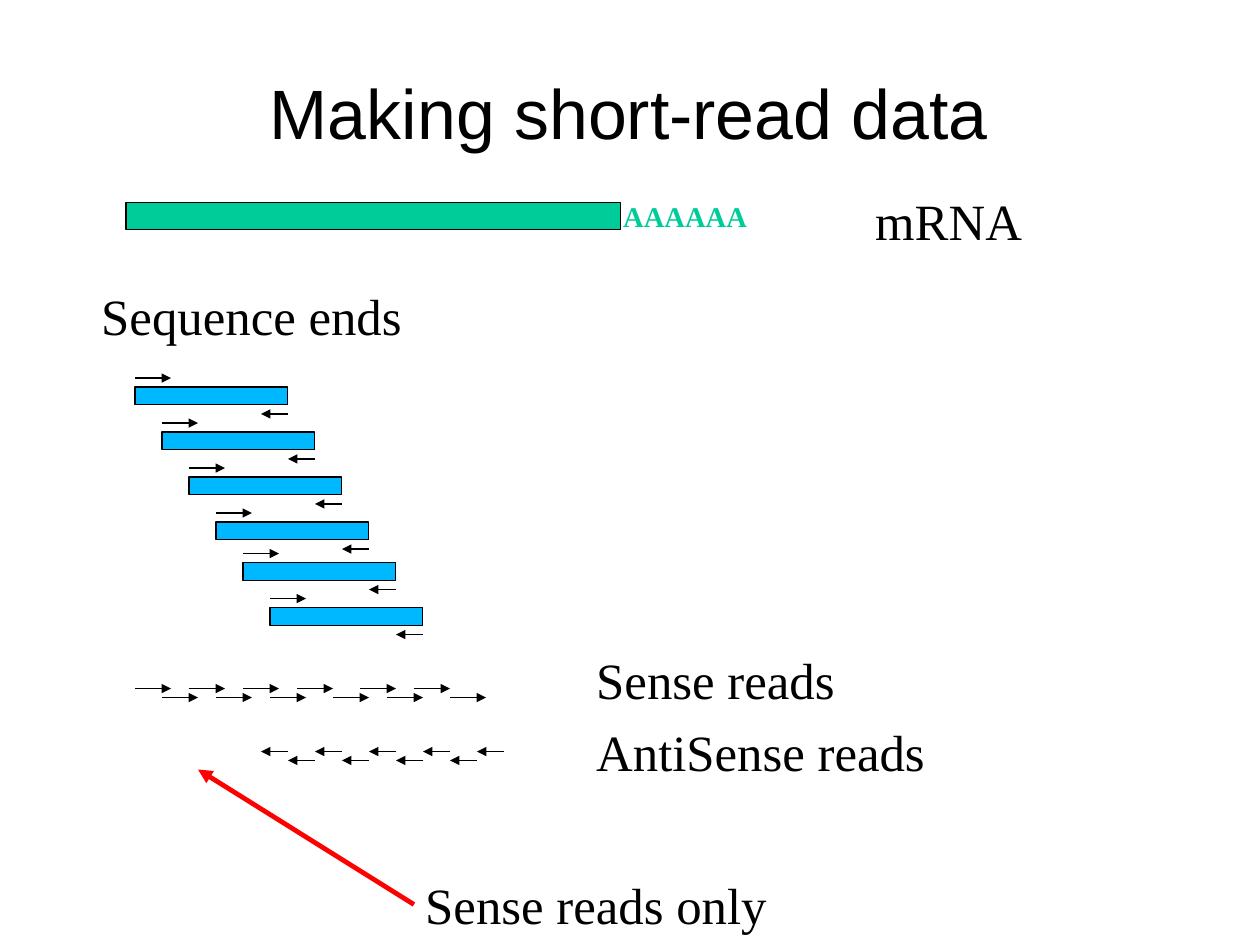
from lxml.etree import SubElement
from pptx import Presentation
from pptx.dml.color import RGBColor
from pptx.enum.shapes import MSO_CONNECTOR as Connector, MSO_SHAPE as Preset
from pptx.enum.text import MSO_ANCHOR as Anchor, MSO_AUTO_SIZE as AutoSize, PP_ALIGN as Align
from pptx.oxml.ns import qn
from pptx.util import Cm, Pt

BLACK = "000000"
RED = "FF0000"
GREEN = "00CC99"
BLUE = "00B8FF"


def color(value):
    return RGBColor.from_string(value)


def apply(target, values):
    for name, value in values.items():
        setattr(target, name, value)


class Diagram:
    thin = 0.75
    label_frame = {"word_wrap": True, "auto_size": AutoSize.SHAPE_TO_FIT_TEXT}
    title_frame = {"word_wrap": True, "vertical_anchor": Anchor.MIDDLE,
                   "margin_left": 0, "margin_right": 0, "margin_top": 0, "margin_bottom": 0}
    title_paragraph = {"alignment": Align.CENTER, "line_spacing": 0.93}
    label_font = {"name": "Times New Roman", "size": Pt(32)}
    tail_font = {"name": "Times New Roman", "size": Pt(18), "bold": True}
    title_font = {"name": "Arial", "size": Pt(44)}

    def __init__(self, slide):
        self.shapes = slide.shapes

    def text(self, words, left, top, width, height, frame, font, fill):
        box = self.shapes.add_textbox(Cm(left), Cm(top), Cm(width), Cm(height))
        apply(box.text_frame, frame)
        paragraph = box.text_frame.paragraphs[0]
        run = paragraph.add_run()
        run.text = words
        apply(run.font, font)
        run.font.color.rgb = color(fill)
        return box, paragraph

    def title(self, words, left, top, width, height):
        _, paragraph = self.text(words, left, top, width, height,
                                 self.title_frame, self.title_font, BLACK)
        apply(paragraph, self.title_paragraph)

    def label(self, words, left, top, width, height=1.6, font=label_font, fill=BLACK):
        box, paragraph = self.text(words, left, top, width, height,
                                   self.label_frame, font, fill)
        spacing = SubElement(paragraph._p.get_or_add_pPr(), qn("a:spcBef"))
        SubElement(spacing, qn("a:spcPct"), val="50000")
        return box

    def bar(self, left, top, width, height, fill):
        bar = self.shapes.add_shape(Preset.RECTANGLE, Cm(left), Cm(top), Cm(width), Cm(height))
        bar.shadow.inherit = False
        bar.fill.solid()
        bar.fill.fore_color.rgb = color(fill)
        bar.line.color.rgb = color(BLACK)
        bar.line.width = Pt(self.thin)

    def arrow(self, x1, y1, x2, y2, stroke=BLACK, weight=thin):
        arrow = self.shapes.add_connector(Connector.STRAIGHT, Cm(x1), Cm(y1), Cm(x2), Cm(y2))
        arrow.line.color.rgb = color(stroke)
        arrow.line.width = Pt(weight)
        properties = arrow._element.spPr
        SubElement(properties.find(qn("a:ln")), qn("a:tailEnd"), type="triangle")
        SubElement(properties, qn("a:effectLst"))
        return arrow

    def sense(self, left, y):
        self.arrow(left, y, left + 0.8, y)

    def antisense(self, right, y):
        self.arrow(right, y, right - 0.6, y)


def main():
    deck = Presentation()
    apply(deck, {"slide_width": Cm(28), "slide_height": Cm(21)})
    diagram = Diagram(deck.slides.add_slide(deck.slide_layouts[6]))

    diagram.title("Making short-read data", 1.4, 0.84, 25.17, 3.48)
    diagram.bar(2.8, 4.5, 11, 0.6, GREEN)
    diagram.label("AAAAAA", 13.6, 4.3, 4, 1.02, Diagram.tail_font, GREEN)
    diagram.label("mRNA", 19.2, 4.1, 5.8)
    diagram.label("Sequence ends", 2, 6.2, 9.4)

    fragment_width = 3.4
    for step, top in enumerate((8.6, 9.6, 10.6, 11.6, 12.5, 13.5)):
        left = 3 + 0.6 * step
        diagram.bar(left, top, fragment_width, 0.4, BLUE)
        diagram.sense(left, top - 0.2)
        diagram.antisense(left + fragment_width, top + 0.6)

    sense_starts = (3, 3.6, 4.2, 4.8, 5.4, 6, 6.6, 7.4, 8, 8.6, 9.2, 10)
    for index, left in enumerate(sense_starts):
        diagram.sense(left, 15.3 + 0.2 * (index % 2))
    for index in range(9):
        diagram.antisense(6.4 + 0.6 * index, 16.7 + 0.2 * (index % 2))

    diagram.label("Sense reads", 13, 14.3, 6)
    diagram.label("AntiSense reads", 13, 15.9, 13)
    sense_only = diagram.label("Sense reads only", 9.2, 19.3, 13.8)
    pointer = diagram.arrow(9.2, 20.1, 4.4, 17.1, RED, 3)
    pointer.begin_connect(sense_only, 1)

    deck.save("out.pptx")


if __name__ == "__main__":
    main()
